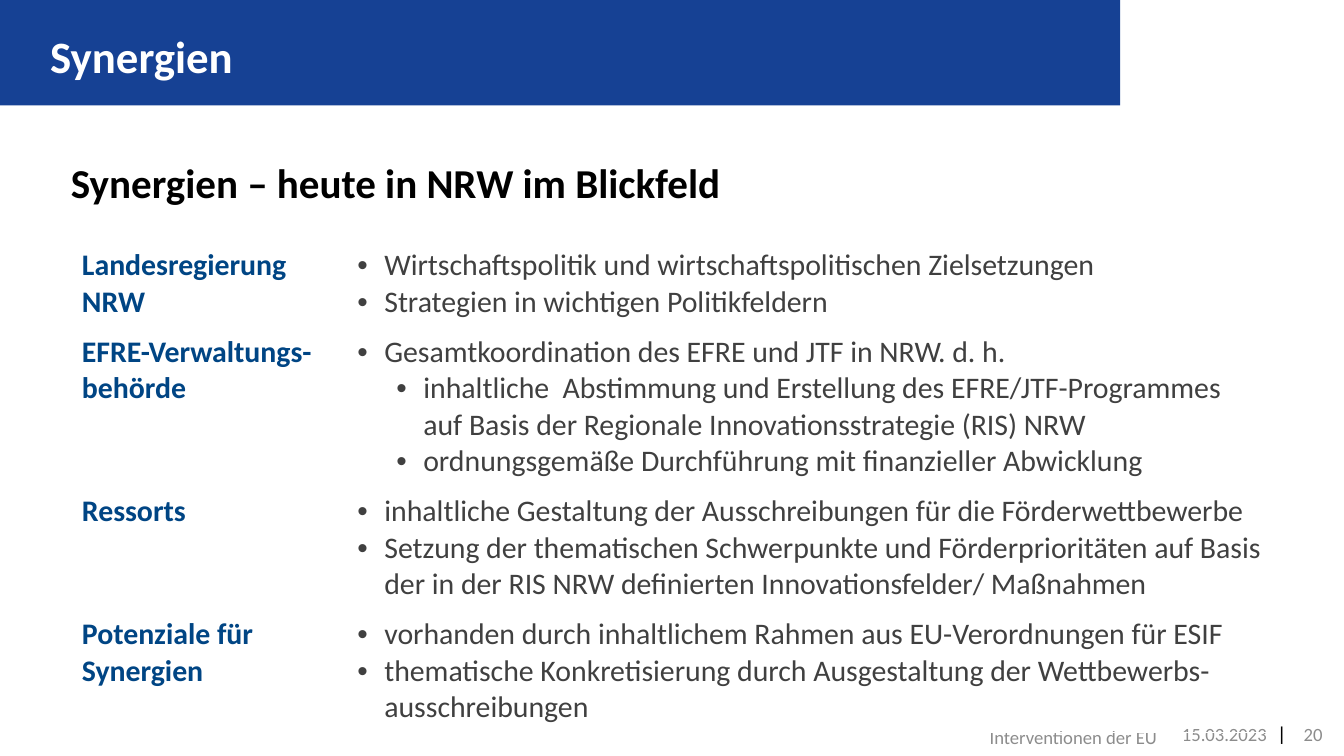
from copy import deepcopy
from dataclasses import dataclass

from lxml import etree
from pptx import Presentation
from pptx import util as u
from pptx.dml.color import RGBColor
from pptx.enum import shapes, text
from pptx.oxml import ns

PX = 4572  # EMU per px, 200 px to the inch
BLUE = RGBColor(0x16, 0x41, 0x94)
NAVY = RGBColor(0x00, 0x45, 0x84)
DARK = RGBColor(0x40, 0x40, 0x40)
GREY = RGBColor(0x8C, 0x8C, 0x8C)
BLACK = RGBColor(0, 0, 0)
WHITE = RGBColor(255, 255, 255)
LINE, GAP = 54, 21  # height of a table line, padding of a row
LEFT, RIGHT = text.PP_ALIGN.LEFT, text.PP_ALIGN.RIGHT


@dataclass
class Item:
    words: str
    level: int = 0


@dataclass
class Row:
    label: str
    items: list[Item]
    lines: int


@dataclass
class Label:
    words: str
    box: tuple[int, int, int, int]
    size: int = 10
    color: RGBColor = GREY
    bold: bool = False
    align: text.PP_ALIGN = LEFT
    pad: tuple[int, int, int, int] = (20, 10, 20, 10)
    font: str = "Calibri"
    middle: bool = True
    wrap: bool = True


LABELS = [
    Label("|", (1896, 1066, 24, 58), color=BLACK, pad=(8, 8, 8, 16),
          font="Arial", middle=False, wrap=False),
    Label("Synergien", (55, 27, 1496, 112), 24, WHITE, True),
    Label("Synergien – heute in NRW im Blickfeld", (86, 184, 1826, 174), 22, BLACK, True),
    Label("15.03.2023", (1746, 1067, 152, 60), align=text.PP_ALIGN.CENTER,
          pad=(8, 8, 8, 16)),
    Label("Interventionen der EU", (811, 1067, 930, 60), align=RIGHT),
    Label("20", (1914, 1067, 78, 60), align=RIGHT, pad=(0, 8, 24, 16)),
]

ROWS = [
    Row("Landesregierung\vNRW", [
        Item("Wirtschaftspolitik und wirtschaftspolitischen Zielsetzungen"),
        Item("Strategien in wichtigen Politikfeldern")], 2),
    Row("EFRE-Verwaltungs-behörde", [
        Item("Gesamtkoordination des EFRE und JTF in NRW. d. h."),
        Item("inhaltliche  Abstimmung und Erstellung des EFRE/JTF-Programmes \v"
             "auf Basis der Regionale Innovationsstrategie (RIS) NRW", 1),
        Item("ordnungsgemäße Durchführung mit finanzieller Abwicklung", 1)], 4),
    Row("Ressorts", [
        Item("inhaltliche Gestaltung der Ausschreibungen für die Förderwettbewerbe"),
        Item("Setzung der thematischen Schwerpunkte und Förderprioritäten auf Basis "
             "der in der RIS NRW definierten Innovationsfelder/ Maßnahmen")], 3),
    Row("Potenziale für\vSynergien", [
        Item("vorhanden durch inhaltlichem Rahmen aus EU-Verordnungen für ESIF"),
        Item("thematische Konkretisierung durch Ausgestaltung der "
             "Wettbewerbs-ausschreibungen")], 3),
]


def write(para, words: str, *, size: int, color: RGBColor, bold: bool = False,
          font: str = "Calibri", align: text.PP_ALIGN = LEFT) -> None:
    para.text = words
    para.alignment = align
    for run in para.runs:
        run.font.size = u.Pt(size)
        run.font.name = font
        run.font.bold = bold
        run.font.color.rgb = color
    # Line breaks take the format of the text around them
    for gap in para._p.findall(ns.qn("a:br")):
        gap.insert(0, deepcopy(para.runs[0]._r.rPr))


def bullet(para, level: int) -> None:
    para.level = level
    props = para._p.get_or_add_pPr()
    props.set("marL", str((40 + 58 * level) * PX))
    props.set("indent", str(-40 * PX))
    etree.SubElement(props, ns.qn("a:buFont")).set("typeface", "Arial")
    etree.SubElement(props, ns.qn("a:buChar")).set("char", "•")


def border(cell, side: str, width: float) -> None:
    line = etree.SubElement(cell._tc.get_or_add_tcPr(), ns.qn(f"a:ln{side}"))
    line.set("w", str(u.Pt(width)))
    fill = etree.SubElement(line, ns.qn("a:solidFill"))
    etree.SubElement(fill, ns.qn("a:srgbClr")).set("val", str(WHITE))


def label(slide, item: Label) -> None:
    frame = slide.shapes.add_textbox(*(n * PX for n in item.box)).text_frame
    frame.word_wrap = item.wrap
    (frame.margin_left, frame.margin_top,
     frame.margin_right, frame.margin_bottom) = (n * PX for n in item.pad)
    frame.vertical_anchor = text.MSO_ANCHOR.MIDDLE if item.middle else text.MSO_ANCHOR.TOP
    write(frame.paragraphs[0], item.words, size=item.size, color=item.color,
          bold=item.bold, font=item.font, align=item.align)


def grid(slide, rows: list[Row]) -> None:
    highs = [row.lines * LINE + GAP for row in rows]
    table = slide.shapes.add_table(len(rows), 2, 102 * PX, 358 * PX,
                                   1796 * PX, sum(highs) * PX).table
    table.first_row = table.horz_banding = False
    for col, wide in zip(table.columns, (410, 1386)):
        col.width = wide * PX
    for i, row in enumerate(rows):
        table.rows[i].height = highs[i] * PX
        head, body = table.cell(i, 0), table.cell(i, 1)
        write(head.text_frame.paragraphs[0], row.label, size=16, color=NAVY, bold=True)
        for j, item in enumerate(row.items):
            frame = body.text_frame
            para = frame.add_paragraph() if j else frame.paragraphs[0]
            bullet(para, item.level)
            write(para, item.words, size=16, color=DARK)
        border(body, "R", 1)
        if i:
            border(body, "T", 0.25)
        border(body, "B", 0.25)
        head.fill.background()
        body.fill.background()


def main() -> None:
    deck = Presentation()
    deck.slide_width, deck.slide_height = 2000 * PX, 1125 * PX
    slide = deck.slides.add_slide(deck.slide_layouts[6])

    # Title band
    band = slide.shapes.add_shape(shapes.MSO_SHAPE.RECTANGLE, 0, 0, 1667 * PX, 157 * PX)
    band.shadow.inherit = False
    band.fill.solid()
    band.fill.fore_color.rgb = BLUE
    band.line.fill.background()

    # Title, heading and footer
    for item in LABELS:
        label(slide, item)

    # Actors and their tasks
    grid(slide, ROWS)
    deck.save("out.pptx")


if __name__ == "__main__":
    main()
